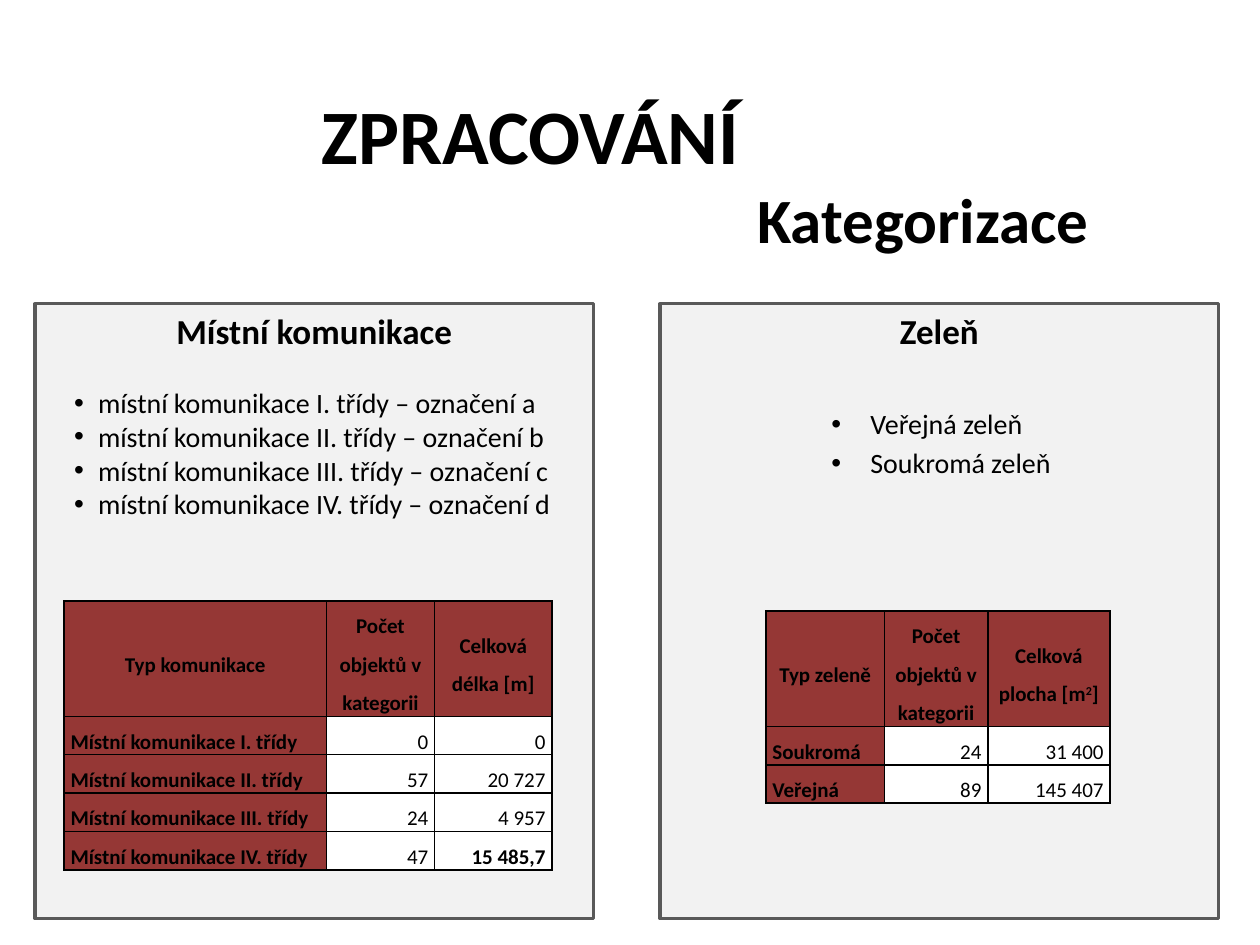
from lxml import etree
from pptx import Presentation
from pptx.dml.color import RGBColor
from pptx.enum import shapes, text
from pptx.oxml import ns
from pptx.util import Inches, Pt

FONT = "Calibri"
COLORS = {"text": "000000", "panel": "F2F2F2", "frame": "595959",
          "header": "953735", "cell": "FFFFFF"}
PANEL_TOP, PANEL_W, PANEL_H = 2.41, 4.43, 4.88
HEAD_ROW_H, ROW_H = 0.91, 0.3
CENTER, RIGHT, LEFT = (text.PP_ALIGN.CENTER, text.PP_ALIGN.RIGHT,
                       text.PP_ALIGN.LEFT)

ROADS = [
    ["Typ komunikace", "Počet objektů v kategorii", "Celková délka [m]"],
    ["Místní komunikace I. třídy", "0", "0"],
    ["Místní komunikace II. třídy", "57", "20 727"],
    ["Místní komunikace III. třídy", "24", "4 957"],
    ["Místní komunikace IV. třídy", "47", "15 485,7"],
]
GREENERY = [
    ["Typ zeleně", "Počet objektů v kategorii", "Celková plocha [m^2^]"],
    ["Soukromá", "24", "31 400"],
    ["Veřejná", "89", "145 407"],
]


def rgb(name):
    return RGBColor.from_string(COLORS[name])


def add_text(p, content, size, bold=False, align=LEFT):
    """Fill a paragraph; text between ^ marks is superscript."""
    p.alignment = align
    for i, part in enumerate(content.split("^")):
        r = p.add_run()
        r.text = part
        r.font.name, r.font.size, r.font.bold = FONT, Pt(size), bold
        r.font.color.rgb = rgb("text")
        if i % 2:
            r._r.get_or_add_rPr().set("baseline", "30000")


def format_heading(sp, content, size):
    tf = sp.text_frame
    tf.word_wrap = True
    tf.auto_size = text.MSO_AUTO_SIZE.NONE
    tf.vertical_anchor = text.MSO_ANCHOR.MIDDLE
    add_text(tf.paragraphs[0], content, size, True, CENTER)


def set_bullet(p, margin, hanging):
    pPr = p._p.get_or_add_pPr()
    pPr.set("marL", str(Inches(margin)))
    pPr.set("indent", str(-Inches(hanging)))
    etree.SubElement(pPr, ns.qn("a:buFont"), typeface="Arial")
    etree.SubElement(pPr, ns.qn("a:buChar"), char="•")


def add_panel(s, left, heading, items, margin, hanging, list_gap, item_gap):
    sp = s.shapes.add_shape(shapes.MSO_SHAPE.RECTANGLE, Inches(left),
                            Inches(PANEL_TOP), Inches(PANEL_W), Inches(PANEL_H))
    sp.shadow.inherit = False
    sp.fill.solid()
    sp.fill.fore_color.rgb = rgb("panel")
    sp.line.color.rgb = rgb("frame")
    sp.line.width = Pt(2)
    tf = sp.text_frame
    tf.word_wrap = True
    tf.vertical_anchor = text.MSO_ANCHOR.TOP
    add_text(tf.paragraphs[0], heading, 20, True, CENTER)
    for i, item in enumerate(items):
        p = tf.add_paragraph()
        set_bullet(p, margin, hanging)
        p.space_before = Pt(item_gap if i else list_gap)
        add_text(p, item, 16)


def set_borders(cell):
    tcPr = cell._tc.get_or_add_tcPr()
    for side in ("lnL", "lnR", "lnT", "lnB"):
        ln = etree.SubElement(tcPr, ns.qn(f"a:{side}"), w=str(Pt(1)))
        fill = etree.SubElement(ln, ns.qn("a:solidFill"))
        etree.SubElement(fill, ns.qn("a:srgbClr"), val=COLORS["text"])


def format_cell(cell, content, is_head, is_label, bold):
    set_borders(cell)
    cell.fill.solid()
    cell.fill.fore_color.rgb = rgb("header" if is_head or is_label else "cell")
    cell.margin_left = cell.margin_right = Inches(0.05)
    cell.margin_top = cell.margin_bottom = 0
    cell.vertical_anchor = (text.MSO_ANCHOR.MIDDLE if is_head
                            else text.MSO_ANCHOR.BOTTOM)
    p = cell.text_frame.paragraphs[0]
    p.line_spacing = 1.5
    align = CENTER if is_head else LEFT if is_label else RIGHT
    add_text(p, content, 12, bold, align)


def add_category_table(s, left, top, widths, rows, bold_values=()):
    heights = [HEAD_ROW_H] + [ROW_H] * (len(rows) - 1)
    table = s.shapes.add_table(len(rows), len(widths), Inches(left), Inches(top),
                               Inches(sum(widths)), Inches(sum(heights))).table
    for column, width in zip(table.columns, widths):
        column.width = Inches(width)
    for i, (row, height) in enumerate(zip(rows, heights)):
        table.rows[i].height = Inches(height)
        for j, value in enumerate(row):
            bold = i == 0 or j == 0 or value in bold_values
            format_cell(table.cell(i, j), value, i == 0, j == 0, bold)


def main():
    prs = Presentation()
    prs.slide_width, prs.slide_height = Inches(10), Inches(7.5)
    s = prs.slides.add_slide(prs.slide_layouts[5])

    title = s.shapes.title
    title.left, title.top = Inches(1.06), Inches(0.44)
    title.width, title.height = Inches(6.3), Inches(1.25)
    format_heading(title, "ZPRACOVÁNÍ", 44)
    subtitle = s.shapes.add_textbox(Inches(4.47), Inches(1.23),
                                    Inches(5.71), Inches(1.01))
    format_heading(subtitle, "Kategorizace", 36)

    road_classes = [f"místní komunikace {number}. třídy – označení {mark}"
                    for number, mark in zip(("I", "II", "III", "IV"), "abcd")]
    add_panel(s, 0.28, "Místní komunikace", road_classes, 0.4, 0.19, 19.5, 0)
    add_panel(s, 5.24, "Zeleň", ["Veřejná zeleň", "Soukromá zeleň"],
              1.57, 0.31, 31.5, 3)
    add_category_table(s, 0.51, 4.77, [2.08, 0.86, 0.93], ROADS, ["15 485,7"])
    add_category_table(s, 6.08, 4.85, [0.94, 0.82, 0.97], GREENERY)
    prs.save("out.pptx")


if __name__ == "__main__":
    main()
